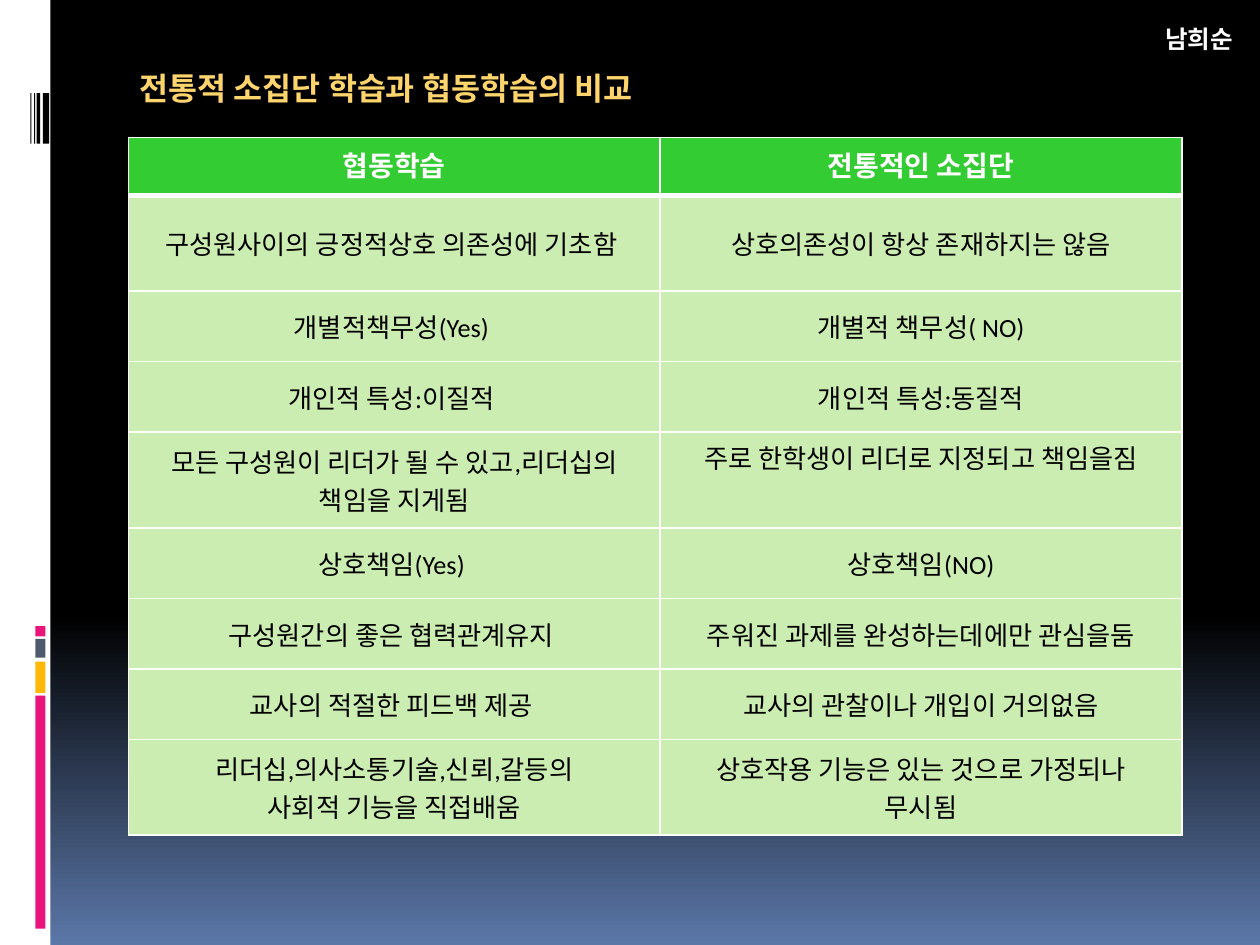
from lxml.etree import SubElement as Sub
from pptx import Presentation
from pptx.dml.color import RGBColor as RGB
from pptx.enum.shapes import MSO_SHAPE as Shape
from pptx.enum.text import MSO_ANCHOR as Anchor, PP_ALIGN as Align
from pptx.oxml.ns import qn
from pptx.util import Inches, Pt

WHITE, BLACK = RGB(255, 255, 255), RGB(0, 0, 0)
GOLD, PINK = RGB(0xFE, 0xD4, 0x6C), RGB(0xEA, 0x15, 0x7A)
AMBER, SLATE = RGB(0xFE, 0xB8, 0x0A), RGB(0x4E, 0x5B, 0x6F)
BLUE = RGB(0x5B, 0x77, 0xA8)
GREEN, PALE = RGB(0x33, 0xCC, 0x33), RGB(0xCC, 0xED, 0xB1)

# Content
TITLE = "전통적 소집단 학습과 협동학습의 비교"
NAME = "남희순"
ROWS = [
    ("협동학습", "전통적인 소집단"),
    ("구성원사이의 긍정적상호 의존성에 기초함 ", "상호의존성이 항상 존재하지는 않음"),
    ("개별적책무성(Yes) ", "개별적 책무성( NO)"),
    ("개인적 특성:이질적 ", "개인적 특성:동질적"),
    ("모든 구성원이 리더가 될 수 있고,리더십의 책임을 지게됨",
     "주로 한학생이 리더로 지정되고 책임을짐"),
    ("상호책임(Yes) ", "상호책임(NO)"),
    ("구성원간의 좋은 협력관계유지 ", "주워진 과제를 완성하는데에만 관심을둠"),
    ("교사의 적절한 피드백 제공 ", "교사의 관찰이나 개입이 거의없음"),
    ("리더십,의사소통기술,신뢰,갈등의\n사회적 기능을 직접배움",
     "상호작용 기능은 있는 것으로 가정되나\n무시됨"),
]
WIDE = [4.22, 4.14]
HEAD_H, ROW_H, TALL_H = 0.46, 0.56, 0.76
TALL = {1, 4, 8}
TOP_SET = {(0, 0), (0, 1), (4, 1)}  # cells with text at the top

# Side strip: left, top, width, height, colour
BARS = [(0, 0, 0.4, 7.5, WHITE)]
BARS += [(x, 0.74, w, 0.4, BLACK)
         for x, w in [(0.34, 0.05), (0.29, 0.03), (0.27, 0.01), (0.24, 0.01)]]
BARS += [(0.28, y, 0.08, h, c)
         for y, h, c in [(5.52, 1.85, PINK), (5.25, 0.25, AMBER),
                         (5.07, 0.15, SLATE), (4.97, 0.08, PINK)]]

# Text formats
TITLE_F = dict(size=Pt(18), name="Calibri", bold=True)
NAME_F = dict(size=Pt(14), name="Calibri", bold=True)
HEAD_F = dict(size=Pt(16), name="Arial", bold=True)
BODY_F = dict(size=Pt(15), name="Calibri", bold=False)


def style(frame, form, color, align):
    for para in frame.paragraphs:
        para.alignment = align
        for run in para.runs:
            for key, val in form.items():
                setattr(run.font, key, val)
            run.font.color.rgb = color


def label(box, text, form, color, rect, low):
    box.left, box.top, box.width, box.height = map(Inches, rect)
    frame = box.text_frame
    frame.text = text
    frame.word_wrap = True
    frame.vertical_anchor = Anchor.BOTTOM
    frame.margin_left, frame.margin_right = Inches(0.11), Inches(0.1)
    frame.margin_top, frame.margin_bottom = Inches(0.05), Inches(low)
    frame.paragraphs[0].line_spacing = Pt(25)
    style(frame, form, color, Align.LEFT)


def edge(cell, sides):
    """Draw white cell borders; sides maps a side to its width in points."""
    props = cell._tc.get_or_add_tcPr()
    for pos, (side, wide) in enumerate(sides.items()):
        line = Sub(props, qn("a:ln" + side), w=str(Pt(wide)))
        Sub(Sub(line, qn("a:solidFill")), qn("a:srgbClr"), val=str(WHITE))
        props.insert(pos, line)


def main():
    prs = Presentation()
    prs.slide_width, prs.slide_height = Inches(10), Inches(7.5)
    slide = prs.slides.add_slide(prs.slide_layouts[5])
    shapes = slide.shapes

    # Background: black, fading to blue below
    back = slide.background.fill
    back.gradient()
    back.gradient_angle = 270
    for stop, pos, color in zip(back.gradient_stops, (0.65, 1), (BLACK, BLUE)):
        stop.position, stop.color.rgb = pos, color

    # Side strip
    for x, y, w, h, color in BARS:
        bar = shapes.add_shape(Shape.RECTANGLE, *map(Inches, (x, y, w, h)))
        bar.shadow.inherit = False
        bar.fill.solid()
        bar.fill.fore_color.rgb = color
        bar.line.fill.background()

    # Title and name
    label(shapes.title, TITLE, TITLE_F, GOLD, (1, -0.16, 8.5, 1.41), 0.4)
    label(shapes.add_textbox(0, 0, 0, 0), NAME, NAME_F, WHITE,
          (9.14, 0, 0.86, 0.47), 0.05)

    # Comparison table
    tall = [HEAD_H] + [TALL_H if r in TALL else ROW_H
                       for r in range(1, len(ROWS))]
    rect = (1.02, 1.09, sum(WIDE), sum(tall))
    grid = shapes.add_table(len(ROWS), len(WIDE), *map(Inches, rect)).table
    for col, wide in zip(grid.columns, WIDE):
        col.width = Inches(wide)
    for r, texts in enumerate(ROWS):
        grid.rows[r].height = Inches(tall[r])
        head = r == 0
        for c, text in enumerate(texts):
            cell = grid.cell(r, c)
            cell.text = text
            cell.vertical_anchor = (Anchor.TOP if (r, c) in TOP_SET
                                    else Anchor.MIDDLE)
            cell.fill.solid()
            cell.fill.fore_color.rgb = GREEN if head else PALE
            style(cell.text_frame, HEAD_F if head else BODY_F,
                  WHITE if head else BLACK, Align.CENTER)
            edge(cell, dict(L=1, R=1, T=3 if r == 1 else 1,
                            B=3 if head else 1))

    prs.save("out.pptx")


if __name__ == "__main__":
    main()
